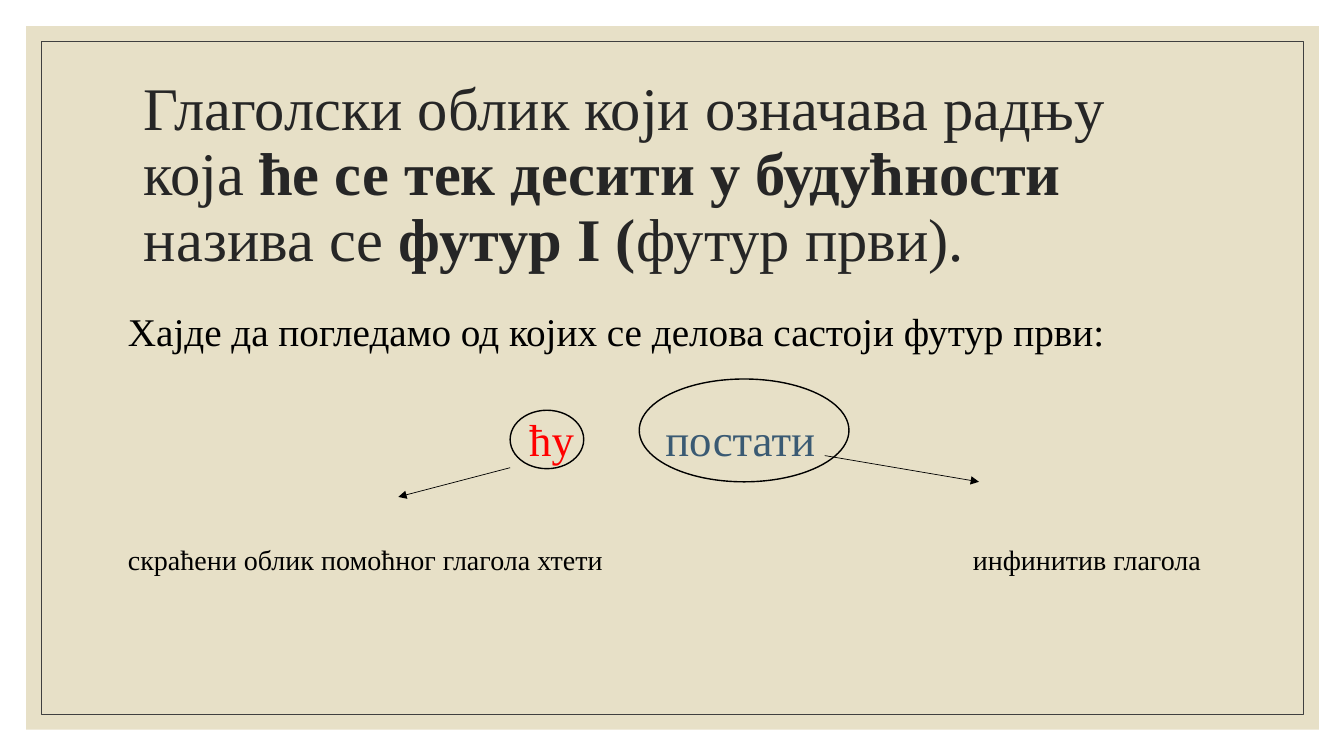
"""Build a slide on the parts of the Serbian first future tense."""
from lxml import etree
from pptx import Presentation
from pptx.dml.color import RGBColor
from pptx.enum.shapes import MSO_CONNECTOR, MSO_SHAPE
from pptx.enum.text import MSO_ANCHOR
from pptx.oxml.ns import qn
from pptx.util import Inches, Pt

RECT = MSO_SHAPE.RECTANGLE
OVAL = MSO_SHAPE.OVAL
LINE = MSO_CONNECTOR.STRAIGHT
TOP = MSO_ANCHOR.TOP
MIDDLE = MSO_ANCHOR.MIDDLE

FONT = "Times New Roman"
SAND = RGBColor(0xE7, 0xE0, 0xC7)
GREY = RGBColor(0x40, 0x40, 0x40)
DARK = RGBColor(0x26, 0x26, 0x26)
BLACK = RGBColor(0x00, 0x00, 0x00)
RED = RGBColor(0xFF, 0x00, 0x00)
BLUE = RGBColor(0x3A, 0x5A, 0x73)

TITLE = [
    ("Глаголски облик који означава радњу која ", False),
    ("ће се тек десити у будућности ", True),
    ("назива се ", False),
    ("футур I (", True),
    ("футур први).", False),
]
TEXTS = [
    ((1.17, 3, 11, 0.57), "Хајде да погледамо од којих се делова састоји футур први:", 28, BLACK),
    ((5.15, 4.04, 0.75, 0.6), "ћу", 32, RED),
    ((6.5, 4.04, 1.8, 0.6), "постати", 32, BLUE),
    ((1.17, 5.33, 5.3, 0.41), "скраћени облик помоћног глагола хтети", 20, BLACK),
    ((9.55, 5.33, 2.62, 0.41), "инфинитив глагола", 20, BLACK),
]
OVALS = [(5.06, 4.07, 0.73, 0.58), (6.34, 3.76, 2.08, 1.02)]
ARROWS = [(5.06, 4.64, 3.95, 4.93), (8.18, 4.52, 9.71, 4.78)]


def add_shape(slide, kind, box, fill=None, line=None, width=1):
    """Add a preset shape with an optional fill and outline."""
    shape = slide.shapes.add_shape(kind, *map(Inches, box))
    shape.shadow.inherit = False
    if fill is None:
        shape.fill.background()
    else:
        shape.fill.solid()
        shape.fill.fore_color.rgb = fill
    if line is None:
        shape.line.fill.background()
    else:
        shape.line.color.rgb = line
        shape.line.width = Pt(width)


def add_text(slide, box, runs, size, color, anchor=TOP, space=1.0):
    """Add a one-paragraph text box from pairs of text and boldness."""
    frame = slide.shapes.add_textbox(*map(Inches, box)).text_frame
    frame.word_wrap = True
    frame.vertical_anchor = anchor
    para = frame.paragraphs[0]
    para.line_spacing = space
    for text, bold in runs:
        run = para.add_run()
        run.text = text
        run.font.name = FONT
        run.font.size = Pt(size)
        run.font.bold = bold
        run.font.color.rgb = color


def add_arrow(slide, ends):
    """Add a thin black line with a triangle at its end."""
    arrow = slide.shapes.add_connector(LINE, *map(Inches, ends))
    arrow.line.color.rgb = BLACK
    arrow.line.width = Pt(0.5)
    props = arrow.line._get_or_add_ln()
    etree.SubElement(props, qn("a:tailEnd"), type="triangle")
    etree.SubElement(props.getparent(), qn("a:effectLst"))


def main():
    """Build and save the slide."""
    deck = Presentation()
    deck.slide_width = Inches(13.33)
    deck.slide_height = Inches(7.5)
    slide = deck.slides.add_slide(deck.slide_layouts[6])
    add_shape(slide, RECT, (0.26, 0.26, 12.82, 6.98), fill=SAND)
    add_shape(slide, RECT, (0.41, 0.41, 12.52, 6.68), line=GREY, width=0.5)
    add_text(slide, (1.33, 1.3, 10.83, 0.9), TITLE, 43.2, DARK, MIDDLE, 0.9)
    for box, text, size, color in TEXTS:
        add_text(slide, box, [(text, False)], size, color)
    for box in OVALS:
        add_shape(slide, OVAL, box, line=BLACK)
    for ends in ARROWS:
        add_arrow(slide, ends)
    deck.save("out.pptx")


if __name__ == "__main__":
    main()
